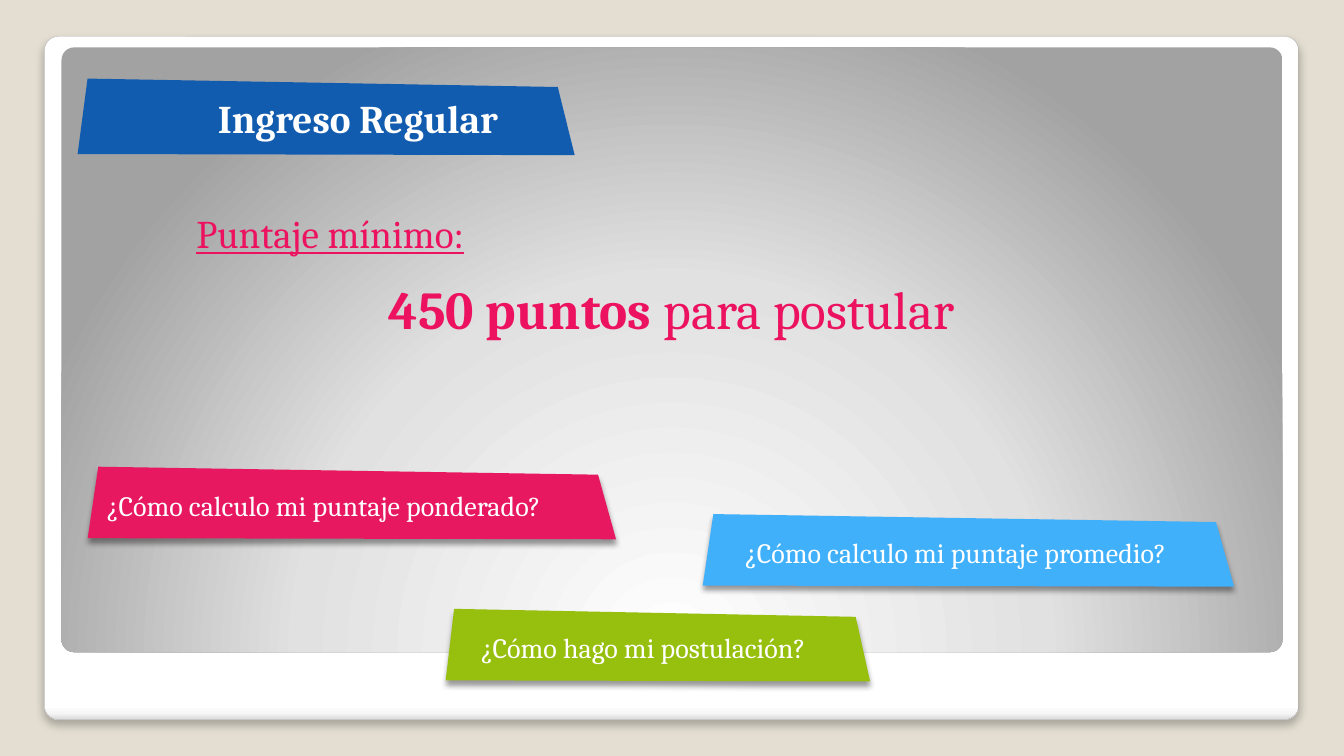
"""Build the slide about the minimum score for regular admission."""
import pptx
import pptx.util
import pptx.dml.color
import pptx.enum.shapes
import pptx.enum.text
import pptx.oxml
from pptx.util import Inches, Pt

FONT = "Cambria"
COLORS = {"background": "E3DED1", "white": "FFFFFF", "outline": "A4A4A4",
          "blue": "125CAF", "text": "EC125F", "pink": "E81860",
          "sky": "40B0FB", "green": "97BF0D"}
TITLE = "Ingreso Regular"
TITLE_BANNER = (0.77, 0.78, 4.93, 0.76)
TITLE_BOX = (1.31, 0.89, 3.73, 0.57)
SCORE_BOX = (1.85, 2.03, 9.62, 1.41)
SCORE_LINES = [
    ("LEFT", 28, 0, [("Puntaje mínimo:", False, True)]),
    ("CENTER", 38, 14, [("450 puntos ", True, False), ("para postular", False, False)]),
]
QUESTIONS = [
    ("¿Cómo calculo mi puntaje ponderado?", "pink", (0.87, 4.63, 5.24, 0.72), 0.09),
    ("¿Cómo calculo mi puntaje promedio?", "sky", (6.97, 5.1, 5.27, 0.72), 0.32),
    ("¿Cómo hago mi postulación?", "green", (4.42, 6.04, 4.21, 0.72), 0.25),
]
BANNER_OUTLINE = [(0.02, 0), (0.966, 0.11), (1, 1), (0, 0.985)]
PANELS = [
    ((0.44, 0.36, 12.44, 6.78),
     [(0, "FFFFFF"), (98, "FFFFFF"), (99, "F7F7F7"), (100, "DADADA")],
     '<a:lin ang="5400000" scaled="0"/>'),
    ((0.61, 0.47, 12.11, 6),
     [(0, "FFFFFF"), (55, "E1E1E1"), (100, "A2A2A2")],
     '<a:path path="circle"><a:fillToRect l="50000" t="175000" r="50000" b="-75000"/></a:path>'),
]
NAMESPACE = 'xmlns:a="http://schemas.openxmlformats.org/drawingml/2006/main"'


def rgb(name):
    return pptx.dml.color.RGBColor.from_string(COLORS[name])


def add_shadow(shape, alpha, blur, distance):
    shape.shadow.inherit = False
    effects = shape._element.spPr.find(pptx.oxml.ns.qn("a:effectLst"))
    effects.append(pptx.oxml.parse_xml(
        f'<a:outerShdw {NAMESPACE} blurRad="{Pt(blur)}" dist="{Pt(distance)}" dir="5400000" '
        f'rotWithShape="0"><a:srgbClr val="000000"><a:alpha val="{alpha * 1000}"/>'
        '</a:srgbClr></a:outerShdw>'))


def add_panel(slide, bounds, stops, direction):
    panel = slide.shapes.add_shape(pptx.enum.shapes.MSO_SHAPE.ROUNDED_RECTANGLE,
                                   *map(Inches, bounds))
    panel.adjustments[0] = 0.021
    panel.shadow.inherit = False
    panel.line.fill.background()
    stop_xml = "".join(f'<a:gs pos="{position * 1000}"><a:srgbClr val="{color}"/></a:gs>'
                       for position, color in stops)
    geometry = panel._element.spPr.find(pptx.oxml.ns.qn("a:prstGeom"))
    geometry.addnext(pptx.oxml.parse_xml(
        f'<a:gradFill {NAMESPACE} rotWithShape="1"><a:gsLst>{stop_xml}</a:gsLst>{direction}</a:gradFill>'))
    return panel


def add_banner(slide, bounds, color):
    left, top, width, height = bounds
    points = [(Inches(left + x * width), Inches(top + y * height)) for x, y in BANNER_OUTLINE]
    builder = slide.shapes.build_freeform(*points[0], scale=1.0)
    builder.add_line_segments(points[1:], close=True)
    banner = builder.convert_to_shape()
    banner.fill.solid()
    banner.fill.fore_color.rgb = rgb(color)
    banner.line.fill.background()
    banner.shadow.inherit = False
    return banner


def format_span(span, size, color, bold=False, underline=False):
    span.font.name = FONT
    span.font.size = Pt(size)
    span.font.bold = bold
    span.font.underline = underline
    span.font.color.rgb = rgb(color)


def add_title(slide):
    add_banner(slide, TITLE_BANNER, "blue")
    title = slide.shapes.title
    slide.shapes._spTree.append(title._element)
    title.left, title.top, title.width, title.height = map(Inches, TITLE_BOX)
    frame = title.text_frame
    frame.text = TITLE
    frame.auto_size = pptx.enum.text.MSO_AUTO_SIZE.NONE
    frame.vertical_anchor = pptx.enum.text.MSO_ANCHOR.TOP
    para = frame.paragraphs[0]
    para.alignment = pptx.enum.text.PP_ALIGN.RIGHT
    format_span(para.runs[0], 28, "white", bold=True)


def add_score(slide):
    frame = slide.shapes.add_textbox(*map(Inches, SCORE_BOX)).text_frame
    frame.word_wrap = True
    for index, (alignment, size, gap, spans) in enumerate(SCORE_LINES):
        para = frame.add_paragraph() if index else frame.paragraphs[0]
        para.alignment = pptx.enum.text.PP_ALIGN[alignment]
        if gap:
            para.space_before = Pt(gap)
        for text, bold, underline in spans:
            span = para.add_run()
            span.text = text
            format_span(span, size, "text", bold, underline)


def add_question(slide, text, color, bounds, indent):
    add_shadow(add_banner(slide, bounds, color), 40, 4, 3)
    left, top, width, _ = bounds
    box = slide.shapes.add_textbox(Inches(left + indent), Inches(top + 0.07),
                                   Inches(width + 0.04), Inches(0.62))
    frame = box.text_frame
    frame.word_wrap = True
    frame.vertical_anchor = pptx.enum.text.MSO_ANCHOR.MIDDLE
    frame.text = text
    format_span(frame.paragraphs[0].runs[0], 20, "white")


def main():
    deck = pptx.Presentation()
    deck.slide_width, deck.slide_height = Inches(13.33), Inches(7.5)
    slide = deck.slides.add_slide(deck.slide_layouts[5])
    slide.background.fill.solid()
    slide.background.fill.fore_color.rgb = rgb("background")
    frame_panel, _ = [add_panel(slide, *panel) for panel in PANELS]
    frame_panel.line.color.rgb = rgb("outline")
    frame_panel.line.width = Pt(0.16)
    add_shadow(frame_panel, 25, 6, 4)
    add_title(slide)
    add_score(slide)
    for question in QUESTIONS:
        add_question(slide, *question)
    deck.save("out.pptx")


if __name__ == "__main__":
    main()
